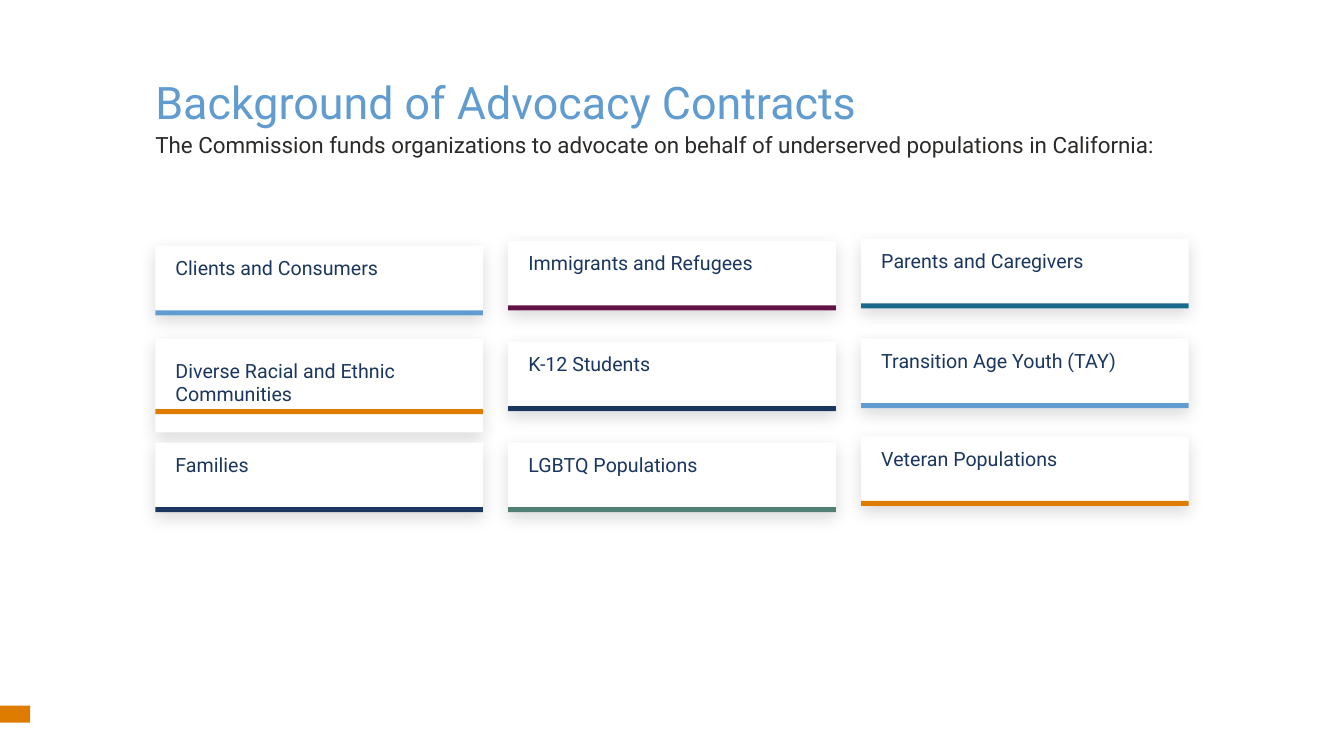
from lxml.etree import SubElement
from pptx import Presentation
from pptx.dml.color import RGBColor
from pptx.enum.shapes import MSO_SHAPE
from pptx.enum.text import MSO_ANCHOR, PP_ALIGN
from pptx.oxml.ns import qn
from pptx.util import Inches, Pt

WHITE = RGBColor(0xFF, 0xFF, 0xFF)
BLUE = RGBColor(0x60, 0x9C, 0xCF)
NAVY = RGBColor(0x1B, 0x36, 0x5F)
ORANGE = RGBColor(0xDE, 0x7C, 0x00)
GREEN = RGBColor(0x50, 0x80, 0x74)
TEAL = RGBColor(0x18, 0x69, 0x8B)
PLUM = RGBColor(0x63, 0x12, 0x48)
INK = RGBColor(0x2C, 0x2A, 0x28)

TITLE = "Background of Advocacy Contracts"
SUBTITLE = ("The Commission funds organizations to advocate on behalf of "
            "underserved populations in California:")
COLUMNS = [
    [("Clients and Consumers", 2.44, BLUE),
     ("Diverse Racial and Ethnic Communities", 3.36, ORANGE),
     ("Families", 4.39, NAVY)],
    [("Immigrants and Refugees", 2.39, PLUM),
     ("K-12 Students", 3.39, NAVY),
     ("LGBTQ Populations", 4.39, GREEN)],
    [("Parents and Caregivers", 2.37, TEAL),
     ("Transition Age Youth (TAY)", 3.36, BLUE),
     ("Veteran Populations", 4.33, ORANGE)],
]
TALL_CARD = "Diverse Racial and Ethnic Communities"
LEFT, COLUMN_STEP, CARD_WIDTH = 1.54, 3.5, 3.25
CARD_HEIGHT, TALL_HEIGHT, BAR_HEIGHT = 0.69, 0.93, 0.05


def write(shape, text, size, color, insets=(0, 0, 0, 0)):
    frame = shape.text_frame
    frame.word_wrap = True
    frame.vertical_anchor = MSO_ANCHOR.TOP
    (frame.margin_left, frame.margin_top,
     frame.margin_right, frame.margin_bottom) = [Inches(i) for i in insets]
    frame.text = text
    paragraph = frame.paragraphs[0]
    paragraph.alignment = PP_ALIGN.LEFT
    font = paragraph.runs[0].font
    font.name, font.size = "Roboto", Pt(size)
    font.color.rgb = color
    return paragraph


def add_heading(slide, text, top, size, color):
    box = slide.shapes.add_textbox(Inches(LEFT), Inches(top), Inches(10.25), Inches(0.92))
    return write(box, text, size, color)


def add_rectangle(shapes, left, top, width, height, color):
    shape = shapes.add_shape(MSO_SHAPE.RECTANGLE, Inches(left), Inches(top),
                             Inches(width), Inches(height))
    shape.shadow.inherit = False
    shape.fill.solid()
    shape.fill.fore_color.rgb = color
    shape.line.fill.background()
    return shape


def add_soft_shadow(shape):
    effects = shape._element.spPr.find(qn("a:effectLst"))
    shadow = SubElement(effects, qn("a:outerShdw"), blurRad=str(Pt(12)), dist=str(Pt(4)),
                        dir="5400000", algn="t", rotWithShape="0")
    color = SubElement(shadow, qn("a:srgbClr"), val="000000")
    SubElement(color, qn("a:alpha"), val="15000")


def add_card(slide, text, left, top, color):
    tall = text == TALL_CARD
    group = slide.shapes.add_group_shape()
    card = add_rectangle(group.shapes, left, top, CARD_WIDTH,
                         TALL_HEIGHT if tall else CARD_HEIGHT, WHITE)
    add_soft_shadow(card)
    write(card, text, 14, NAVY, (0.2, 0.2 if tall else 0.1, 0.2, 0.25))
    bar_offset = 0.7 if tall else CARD_HEIGHT - BAR_HEIGHT
    add_rectangle(group.shapes, left, top + bar_offset, CARD_WIDTH, BAR_HEIGHT, color)


def main():
    presentation = Presentation()
    presentation.slide_width = Inches(13.33)
    presentation.slide_height = Inches(7.5)
    slide = presentation.slides.add_slide(presentation.slide_layouts[6])

    add_heading(slide, TITLE, 0.8, 32, BLUE).line_spacing = 0.9
    add_heading(slide, SUBTITLE, 1.3, 16, INK)
    for index, cards in enumerate(COLUMNS):
        for text, top, color in cards:
            add_card(slide, text, LEFT + index * COLUMN_STEP, top, color)
    add_rectangle(slide.shapes, 0, 7, 0.3, 0.17, ORANGE)
    presentation.save("out.pptx")


if __name__ == "__main__":
    main()
